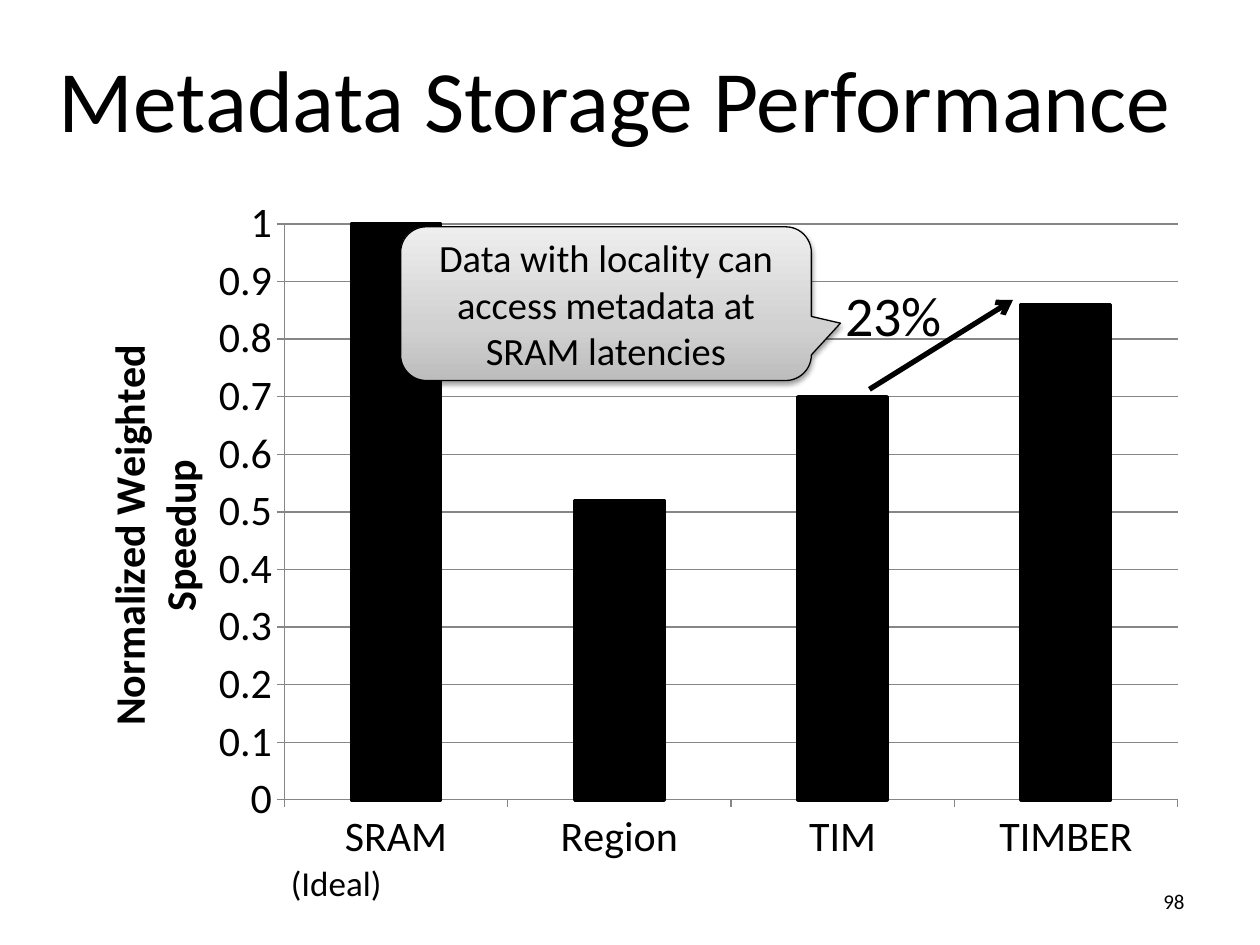
from lxml import etree
from pptx import Presentation
from pptx.chart.data import CategoryChartData
from pptx.dml.color import RGBColor
from pptx.enum.chart import XL_CHART_TYPE as Chart, XL_TICK_MARK as Tick
from pptx.enum.shapes import MSO_CONNECTOR as Connector, MSO_SHAPE as Shape
from pptx.enum.text import MSO_ANCHOR as Anchor, MSO_AUTO_SIZE as AutoSize, PP_ALIGN as Align
from pptx.oxml.ns import qn
from pptx.util import Inches, Pt

FONT = "Calibri"
COLORS = {"ink": "000000", "grid": "868686", "low": "BDBDBD", "mid": "D1D1D1", "high": "EEEEEE"}
SPEEDUP = {"SRAM": 1, "Region": 0.52, "TIM": 0.7, "TIMBER": 0.86}


def color(name):
    return RGBColor.from_string(COLORS[name])


def set_line(line, name, width):
    line.color.rgb = color(name)
    line.width = Pt(width)


def set_font(font, size, bold=False):
    font.name, font.size, font.bold = FONT, Pt(size), bold
    font.color.rgb = color("ink")


def put_text(tf, text, size=20, align=Align.LEFT, anchor=Anchor.TOP, wrap=True):
    tf.word_wrap = wrap
    tf.auto_size = AutoSize.NONE if wrap else AutoSize.SHAPE_TO_FIT_TEXT
    tf.vertical_anchor = anchor
    p = tf.paragraphs[0]
    p.alignment = align
    r = p.add_run()
    r.text = text
    set_font(r.font, size)


def add_text(s, text, x, y, w, h, **text_format):
    box = s.shapes.add_textbox(Inches(x), Inches(y), Inches(w), Inches(h))
    put_text(box.text_frame, text, **text_format)


def set_layout(parent, index, inner=False, **fractions):
    """Place a chart part by fractions of the chart's size."""
    for old in parent.findall(qn("c:layout")):
        parent.remove(old)
    layout = etree.Element(qn("c:layout"))
    manual = etree.SubElement(layout, qn("c:manualLayout"))
    items = [("layoutTarget", "inner")] if inner else []
    items += [("xMode", "edge"), ("yMode", "edge"), *fractions.items()]
    for tag, value in items:
        etree.SubElement(manual, qn(f"c:{tag}"), val=str(value))
    parent.insert(index, layout)


def add_speedup_chart(s, x, y, w, h):
    data = CategoryChartData()
    data.categories = list(SPEEDUP)
    data.add_series("Series 1", list(SPEEDUP.values()))
    chart = s.shapes.add_chart(Chart.COLUMN_CLUSTERED, Inches(x), Inches(y),
                               Inches(w), Inches(h), data).chart
    chart.has_legend = chart.has_title = False
    set_font(chart.font, 24)

    # Bars
    plot = chart.plots[0]
    plot.gap_width = 150
    plot.vary_by_categories = False
    bars = plot.series[0].format
    bars.fill.solid()
    bars.fill.fore_color.rgb = color("ink")
    set_line(bars.line, "ink", 2)

    # Axes
    axis = chart.value_axis
    for each in (chart.category_axis, axis):
        each.major_tick_mark, each.minor_tick_mark = Tick.OUTSIDE, Tick.NONE
        set_line(each.format.line, "grid", 0.75)
    axis.minimum_scale, axis.maximum_scale, axis.major_unit = 0, 1, 0.1
    axis.tick_labels.number_format = "General"
    axis.tick_labels.number_format_is_linked = False
    axis.has_major_gridlines = True
    set_line(axis.major_gridlines.format.line, "grid", 0.75)
    title = axis.axis_title
    r = title.text_frame.paragraphs[0].add_run()
    r.text = "Normalized Weighted Speedup"
    set_font(r.font, 24, bold=True)

    # Positions inside the chart
    set_layout(title._element, 1, x=0.04, y=0.22)
    plot_area = chart._chartSpace.find(".//" + qn("c:plotArea"))
    set_layout(plot_area, 0, inner=True, x=0.206, y=0.056, w=0.774, h=0.831)


def add_arrow(s, tip, start):
    """Draw an arrow whose head sits at its first point."""
    line = s.shapes.add_connector(Connector.STRAIGHT, *map(Inches, tip + start))
    set_line(line.line, "ink", 3)
    etree.SubElement(line.line._get_or_add_ln(), qn("a:headEnd"), type="arrow")
    etree.SubElement(line._element.spPr, qn("a:effectLst"))


def add_callout(s, text, x, y, w, h, **text_format):
    sp = s.shapes.add_shape(Shape.ROUNDED_RECTANGULAR_CALLOUT,
                            Inches(x), Inches(y), Inches(w), Inches(h))
    for i, value in enumerate((0.571, 0.127, 0.167)):
        sp.adjustments[i] = value
    set_line(sp.line, "ink", 0.75)

    # Gradient running from bottom to top
    sp.fill.gradient()
    sp.fill.gradient_angle = 90
    stops = sp._element.spPr.find(".//" + qn("a:gsLst"))
    for old in list(stops):
        stops.remove(old)
    for percent, name in ((0, "low"), (35, "mid"), (100, "high")):
        stop = etree.SubElement(stops, qn("a:gs"), pos=str(percent * 1000))
        etree.SubElement(stop, qn("a:srgbClr"), val=COLORS[name])

    # Soft shadow below
    sp.shadow.inherit = False
    effects = sp._element.spPr.find(qn("a:effectLst"))
    shadow = etree.SubElement(effects, qn("a:outerShdw"), blurRad=str(Pt(3.1)),
                              dist=str(Pt(1.6)), dir="5400000", rotWithShape="0")
    ink = etree.SubElement(shadow, qn("a:srgbClr"), val=COLORS["ink"])
    etree.SubElement(ink, qn("a:alpha"), val="38000")
    put_text(sp.text_frame, text, **text_format)


def main():
    prs = Presentation()
    prs.slide_width, prs.slide_height = Inches(10), Inches(7.5)
    s = prs.slides.add_slide(prs.slide_layouts[6])

    # Chart, page number and title
    add_speedup_chart(s, 0.37, 1.47, 9.16, 5.5)
    add_text(s, "98", 7.17, 6.95, 2.33, 0.4, size=12, align=Align.RIGHT, anchor=Anchor.MIDDLE)
    add_text(s, "Metadata Storage Performance", 0.37, 0.46, 9.16, 0.62,
             size=50, anchor=Anchor.MIDDLE)

    # Notes on the chart
    add_arrow(s, tip=(8.04, 2.38), start=(6.9, 3.09))
    add_text(s, "23%", 6.61, 2.18, 0.98, 0.64, size=32, wrap=False)
    add_callout(s, "Data with locality can access metadata at SRAM latencies",
                3.18, 1.8, 3.26, 1.22, size=22, align=Align.CENTER, anchor=Anchor.MIDDLE)
    add_text(s, "(Ideal)", 2.21, 6.79, 0.93, 0.44, size=20, wrap=False)

    prs.save("out.pptx")


if __name__ == "__main__":
    main()
